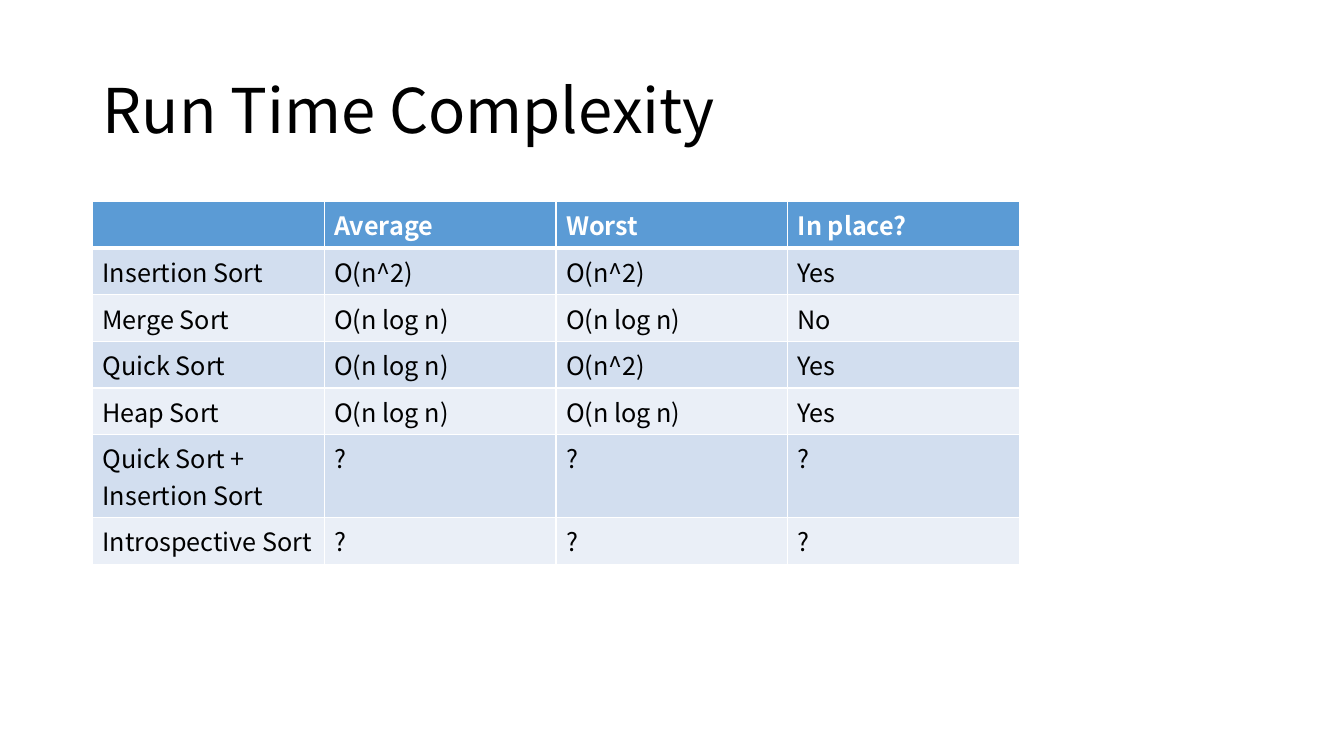
from lxml.etree import SubElement
from pptx import Presentation
from pptx.dml.color import RGBColor
from pptx.enum.text import MSO_ANCHOR
from pptx.oxml.ns import qn
from pptx.util import Cm, Pt

TITLE = "Run Time Complexity"
ROWS = [
    ("", "Average", "Worst", "In place?"),
    ("Insertion Sort", "O(n^2)", "O(n^2)", "Yes"),
    ("Merge Sort", "O(n log n)", "O(n log n)", "No"),
    ("Quick Sort", "O(n log n)", "O(n^2)", "Yes"),
    ("Heap Sort", "O(n log n)", "O(n log n)", "Yes"),
    ("Quick Sort + Insertion Sort", "?", "?", "?"),
    ("Introspective Sort", "?", "?", "?"),
]
COLORS = {
    "text": "000000",
    "white": "FFFFFF",
    "header": "5B9BD5",
    "odd": "D2DEEF",
    "even": "EAEFF7",
}
FONT = "Noto Sans CJK KR"
LEFT, TABLE_TOP = 2.33, 5.08
COL_WIDTH, ROW_HEIGHT = 5.84, 1.03


def rgb(name):
    return RGBColor.from_string(COLORS[name])


def set_font(p, size, color, bold=False):
    p.font.name = FONT
    p.font.size = Pt(size)
    p.font.bold = bold
    p.font.color.rgb = rgb(color)


def add_border(cell, side, width):
    ln = SubElement(cell._tc.get_or_add_tcPr(), qn(f"a:ln{side}"), w=str(Pt(width)))
    fill = SubElement(ln, qn("a:solidFill"))
    SubElement(fill, qn("a:srgbClr"), val=COLORS["white"])


prs = Presentation()
prs.slide_width, prs.slide_height = Cm(33.87), Cm(19.05)
s = prs.slides.add_slide(prs.slide_layouts[5])

title = s.shapes.title
title.left, title.top, title.width, title.height = Cm(LEFT), Cm(1.01), Cm(29.21), Cm(3.68)
tf = title.text_frame
tf.text = TITLE
tf.word_wrap = True
tf.vertical_anchor = MSO_ANCHOR.MIDDLE
p = tf.paragraphs[0]
p.alignment = 1
p.line_spacing = 0.9
set_font(p, 44, "text")

n_rows, n_cols = len(ROWS), len(ROWS[0])
table = s.shapes.add_table(
    n_rows, n_cols, Cm(LEFT), Cm(TABLE_TOP), Cm(COL_WIDTH * n_cols), Cm(ROW_HEIGHT * n_rows)
).table

for i, row in enumerate(ROWS):
    is_header = i == 0
    band = "header" if is_header else "odd" if i % 2 else "even"
    widths = {"L": 1, "R": 1, "T": 3 if i == 1 else 1, "B": 3 if is_header else 1}
    for j, text in enumerate(row):
        cell = table.cell(i, j)
        cell.text = text
        set_font(cell.text_frame.paragraphs[0], 18, "white" if is_header else "text", is_header)
        for side, width in widths.items():
            add_border(cell, side, width)
        cell.fill.solid()
        cell.fill.fore_color.rgb = rgb(band)

prs.save("out.pptx")
